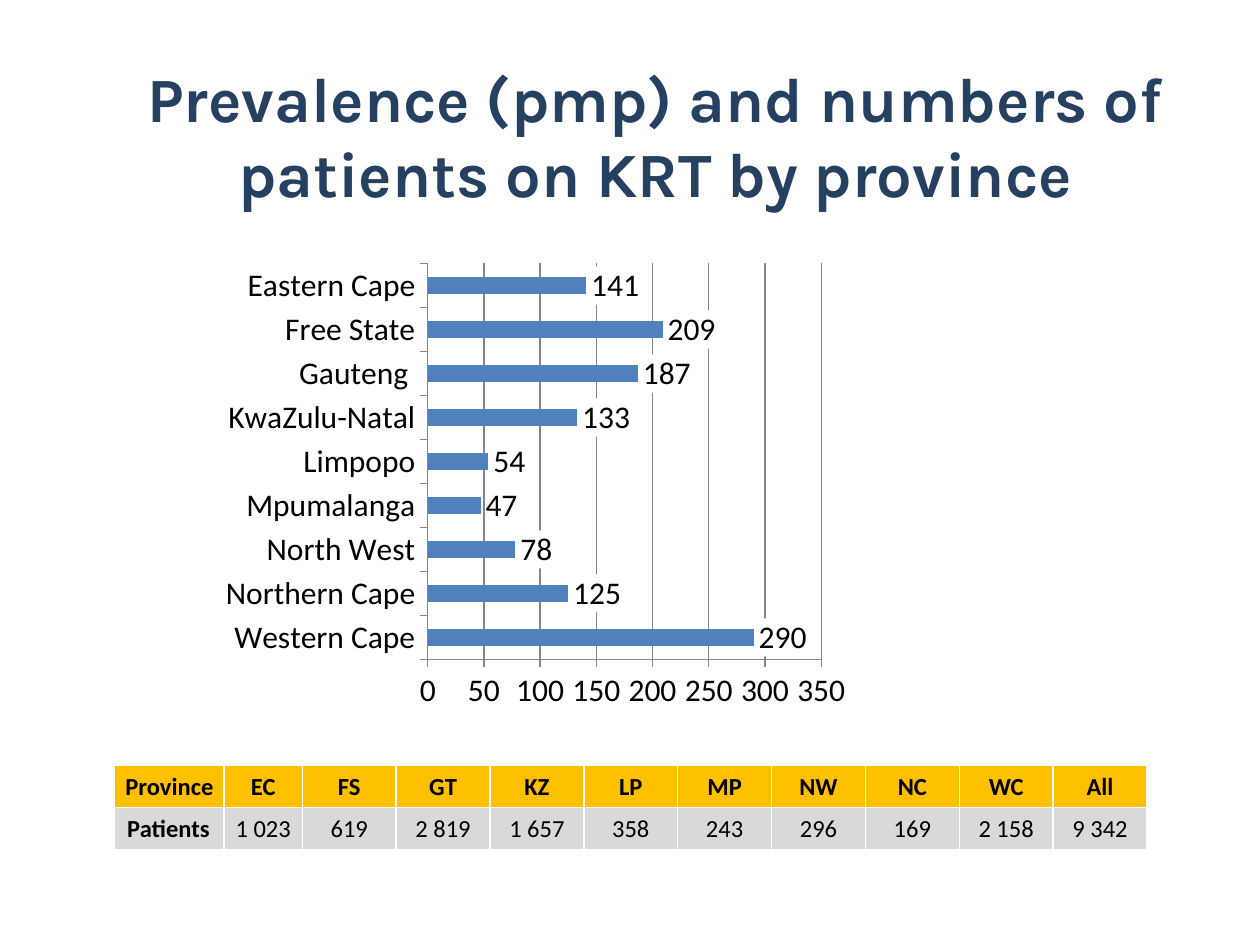
from lxml import etree
from pptx import Presentation
from pptx.chart.data import CategoryChartData
from pptx.dml.color import RGBColor
from pptx.enum.chart import XL_CHART_TYPE, XL_LABEL_POSITION, XL_TICK_MARK
from pptx.enum.text import MSO_ANCHOR, PP_ALIGN
from pptx.oxml import parse_xml
from pptx.oxml.ns import nsdecls, qn
from pptx.util import Inches, Pt

BAR_CLUSTERED = XL_CHART_TYPE.BAR_CLUSTERED
OUTSIDE_END = XL_LABEL_POSITION.OUTSIDE_END
TICK_OUT = XL_TICK_MARK.OUTSIDE
MIDDLE = MSO_ANCHOR.MIDDLE
CENTER, LEFT = PP_ALIGN.CENTER, PP_ALIGN.LEFT

WIDTH, HEIGHT = 10, 7.5
COLORS = {"title": "254061", "bar": "4F81BD", "text": "000000", "axis": "868686",
          "header": "FFC000", "body": "D9D9D9", "white": "FFFFFF"}

TITLE = "Prevalence (pmp) and numbers of patients on KRT by province"
PREVALENCE = {"Western Cape": 290, "Northern Cape": 125, "North West": 78,
              "Mpumalanga": 47, "Limpopo": 54, "KwaZulu-Natal": 133,
              "Gauteng ": 187, "Free State": 209, "Eastern Cape": 141}
PATIENTS = [
    ["Province", "EC", "FS", "GT", "KZ", "LP", "MP", "NW", "NC", "WC", "All"],
    ["Patients", "1 023", "619", "2 819", "1 657", "358", "243", "296", "169",
     "2 158", "9 342"],
]
COLUMN_WIDTHS = [0.87, 0.62] + [0.745] * 9

# Boxes as shares of the slide: left, top, width, height
TITLE_BOX = (0.075, 0.059, 0.89, 0.167)
CHART_BOX = (0.169, 0.269, 0.512, 0.493)
TABLE_BOX = (0.091, 0.81, 0.819, 0.089)
# Plot area as shares of the chart
PLOT_AREA = {"x": 0.333, "y": 0.02, "w": 0.61, "h": 0.85}


def place(box):
    """Turn shares of the slide into lengths."""
    return [Inches(share * side) for share, side in zip(box, (WIDTH, HEIGHT) * 2)]


def color(name):
    return RGBColor.from_string(COLORS[name])


def set_font(font, font_color="text", **values):
    for attribute, value in values.items():
        setattr(font, attribute, value)
    font.color.rgb = color(font_color)


def add_title(slide, box):
    frame = slide.shapes.add_textbox(*place(box)).text_frame
    frame.word_wrap = True
    frame.vertical_anchor = MIDDLE
    paragraph = frame.paragraphs[0]
    paragraph.alignment = CENTER
    run = paragraph.add_run()
    run.text = TITLE
    set_font(run.font, "title", name="Karla", size=Pt(36), bold=True)


def set_plot_area(chart):
    """Fix the inner plot area, which has no public method."""
    plot_area = chart.plots[0]._element.getparent()
    for old in plot_area.findall(qn("c:layout")):
        plot_area.remove(old)
    layout = parse_xml(f"<c:layout {nsdecls('c')}><c:manualLayout/></c:layout>")
    settings = {"layoutTarget": "inner", "xMode": "edge", "yMode": "edge", **PLOT_AREA}
    for tag, value in settings.items():
        etree.SubElement(layout[0], qn(f"c:{tag}")).set("val", str(value))
    plot_area.insert(0, layout)


def add_prevalence_chart(slide, box):
    data = CategoryChartData(number_format="0")
    data.categories = list(PREVALENCE)
    data.add_series("Series 1", list(PREVALENCE.values()))
    chart = slide.shapes.add_chart(BAR_CLUSTERED, *place(box), data).chart
    chart.has_legend = chart.has_title = False
    set_font(chart.font, name="Calibri", size=Pt(18))
    set_plot_area(chart)

    # Bars and their value labels on white
    plot = chart.plots[0]
    plot.vary_by_categories = False
    plot.gap_width = 150
    series = plot.series[0]
    series.format.fill.solid()
    series.format.fill.fore_color.rgb = color("bar")
    labels = series.data_labels
    label_values = {"show_value": True, "number_format": "0",
                    "number_format_is_linked": False, "position": OUTSIDE_END}
    for attribute, value in label_values.items():
        setattr(labels, attribute, value)
    set_font(labels.font, name="Calibri", size=Pt(18))
    labels._element.find(qn("c:numFmt")).addnext(parse_xml(
        f'<c:spPr {nsdecls("c", "a")}><a:solidFill>'
        f'<a:srgbClr val="{COLORS["white"]}"/></a:solidFill></c:spPr>'))

    # Axes and gridlines
    value_axis, category_axis = chart.value_axis, chart.category_axis
    value_axis.minimum_scale, value_axis.maximum_scale = 0, 350
    value_axis.major_unit = 50
    value_axis.has_major_gridlines = True
    value_axis.tick_labels.number_format = "0"
    value_axis.tick_labels.number_format_is_linked = False
    for axis in (value_axis, category_axis):
        axis.major_tick_mark = TICK_OUT
    for part in (value_axis, category_axis, value_axis.major_gridlines):
        part.format.line.color.rgb = color("axis")
        part.format.line.width = Pt(0.75)


def set_borders(cell):
    properties = cell._tc.get_or_add_tcPr()
    for index, side in enumerate(("lnL", "lnR", "lnT", "lnB")):
        properties.insert(index, parse_xml(
            f'<a:{side} {nsdecls("a")} w="{Pt(1)}"><a:solidFill>'
            f'<a:srgbClr val="{COLORS["white"]}"/></a:solidFill></a:{side}>'))


def fill_cell(cell, text, fill, bold, indented):
    cell_values = {"margin_left": Inches(0.1 if indented else 0.01),
                   "margin_right": Inches(0.01), "margin_top": Inches(0.01),
                   "margin_bottom": 0, "vertical_anchor": MIDDLE}
    for attribute, value in cell_values.items():
        setattr(cell, attribute, value)
    cell.fill.solid()
    cell.fill.fore_color.rgb = color(fill)
    set_borders(cell)
    paragraph = cell.text_frame.paragraphs[0]
    paragraph.alignment = LEFT if indented else CENTER
    run = paragraph.add_run()
    run.text = text
    set_font(run.font, name="Calibri", size=Pt(14), bold=bold)


def add_patient_table(slide, box):
    table = slide.shapes.add_table(
        len(PATIENTS), len(COLUMN_WIDTHS), *place(box)).table
    for column, width in zip(table.columns, COLUMN_WIDTHS):
        column.width = Inches(width)
    for row, texts in enumerate(PATIENTS):
        is_header = row == 0
        for column, text in enumerate(texts):
            is_label = column == 0
            fill_cell(table.cell(row, column), text,
                      fill="header" if is_header else "body",
                      bold=is_header or is_label,
                      indented=is_label and not is_header)


def main():
    presentation = Presentation()
    presentation.slide_width = Inches(WIDTH)
    presentation.slide_height = Inches(HEIGHT)
    slide = presentation.slides.add_slide(presentation.slide_layouts[6])
    add_prevalence_chart(slide, CHART_BOX)
    add_title(slide, TITLE_BOX)
    add_patient_table(slide, TABLE_BOX)
    presentation.save("out.pptx")


if __name__ == "__main__":
    main()
